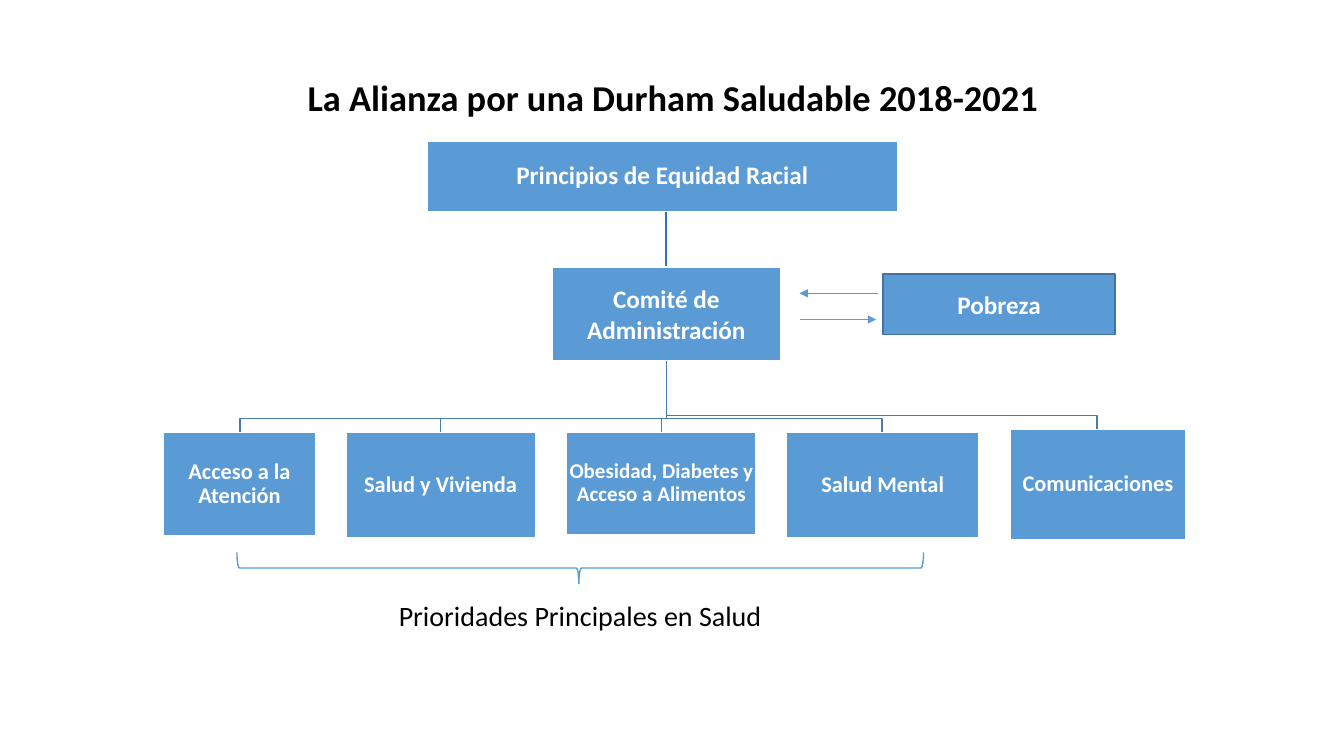
from lxml import etree
from pptx import Presentation
from pptx.dml.color import RGBColor
from pptx.enum.shapes import MSO_CONNECTOR, MSO_SHAPE
from pptx.enum.text import MSO_ANCHOR, MSO_AUTO_SIZE, PP_ALIGN
from pptx.oxml.ns import qn
from pptx.util import Inches, Pt

STRAIGHT = MSO_CONNECTOR.STRAIGHT
RECTANGLE, LEFT_BRACE = MSO_SHAPE.RECTANGLE, MSO_SHAPE.LEFT_BRACE
MIDDLE, CENTER = MSO_ANCHOR.MIDDLE, PP_ALIGN.CENTER
NO_AUTO_SIZE = MSO_AUTO_SIZE.NONE
TOP_SIDE = 0
TITLE_ONLY = 5

WIDTH, HEIGHT = Inches(13.33), Inches(7.5)
COLUMNS, ROWS = 133.3, 75

BLUE, WHITE, BLACK = "5B9BD5", "FFFFFF", "000000"
BRANCH_BLUE, TRUNK_BLUE, EDGE_BLUE = "497CAB", "2E75B6", "43739E"

TRUNK = 66.1
COMMITTEE_BOTTOM = 35.8
# label, left, top, width, height, size, branch end column, branch level
AREAS = [
    ("Acceso a la Atención", 16.2, 42.9, 15.1, 10.3, 16, 23.8, 41.5),
    ("Salud y Vivienda", 34.3, 42.9, 18.8, 10.4, 16, 43.7, 41.5),
    ("Obesidad, Diabetes y Acceso a Alimentos", 56.2, 42.9, 18.8, 10.1, 15, 65.6, 41.5),
    ("Salud Mental", 78, 42.9, 19.1, 10.4, 16, 87.5, 41.5),
    ("Comunicaciones", 100.2, 42.6, 17.4, 10.9, 16, 108.8, 41.2),
]


def color(hex_string):
    return RGBColor.from_string(hex_string)


def column(count):
    return round(WIDTH * count / COLUMNS)


def row(count):
    return round(HEIGHT * count / ROWS)


def area(left, top, width, height):
    return column(left), row(top), column(width), row(height)


class Chart:
    """Draws the organization chart's elements on one slide, in grid units."""

    def __init__(self, slide, font="Calibri"):
        self.slide = slide
        self.font = font

    def add_text(self, shape, lines, size, ink, bold=True, spacing=1.0, inset=None):
        frame = shape.text_frame
        frame.word_wrap = True
        frame.auto_size = NO_AUTO_SIZE
        frame.vertical_anchor = MIDDLE
        if inset is not None:
            frame.margin_left = frame.margin_right = Inches(inset)
            frame.margin_top = frame.margin_bottom = Inches(inset)
        for index, line in enumerate(lines):
            paragraph = frame.add_paragraph() if index else frame.paragraphs[0]
            paragraph.alignment = CENTER
            paragraph.line_spacing = spacing
            run = paragraph.add_run()
            run.text = line
            run.font.name = self.font
            run.font.size = Pt(size)
            run.font.bold = bold
            run.font.color.rgb = color(ink)

    def outline(self, shape, ink, width=1):
        shape.line.color.rgb = color(ink)
        shape.line.width = Pt(width)

    def title(self, text, place):
        title = self.slide.shapes.title
        title.left, title.top, title.width, title.height = area(*place)
        self.add_text(title, [text], 26, BLACK)

    def caption(self, text, place):
        box = self.slide.shapes.add_textbox(*area(*place))
        self.add_text(box, [text], 20, BLACK, bold=False)

    def box(self, lines, place, size=18, edge=WHITE, spacing=0.9):
        shape = self.slide.shapes.add_shape(RECTANGLE, *area(*place))
        shape.shadow.inherit = False
        shape.fill.solid()
        shape.fill.fore_color.rgb = color(BLUE)
        self.outline(shape, edge)
        self.add_text(shape, lines, size, WHITE, spacing=spacing, inset=0.01)
        return shape

    def branch(self, end_column, level, end_row):
        """Draws a bent line from below the committee down to an area."""
        builder = self.slide.shapes.build_freeform(column(TRUNK), row(COMMITTEE_BOTTOM))
        corners = [(TRUNK, level), (end_column, level), (end_column, end_row)]
        builder.add_line_segments([(column(x), row(y)) for x, y in corners], close=False)
        shape = builder.convert_to_shape()
        shape.shadow.inherit = False
        shape.fill.background()
        self.outline(shape, BRANCH_BLUE)

    def line(self, start, end, ink, width, arrow=False):
        connector = self.slide.shapes.add_connector(
            STRAIGHT, column(start[0]), row(start[1]), column(end[0]), row(end[1]))
        self.outline(connector, ink, width)
        properties = connector.element.spPr
        if arrow:
            etree.SubElement(properties.find(qn("a:ln")), qn("a:tailEnd"), type="triangle")
        etree.SubElement(properties, qn("a:effectLst"))
        return connector

    def brace(self, place):
        """Draws a brace turned so that its tip points down."""
        shape = self.slide.shapes.add_shape(LEFT_BRACE, *area(*place))
        shape.shadow.inherit = False
        shape.rotation = 270
        shape.adjustments[0] = 0.083
        shape.adjustments[1] = 0.498
        shape.fill.background()
        self.outline(shape, BLUE)


def main():
    presentation = Presentation()
    presentation.slide_width, presentation.slide_height = WIDTH, HEIGHT
    slide = presentation.slides.add_slide(presentation.slide_layouts[TITLE_ONLY])
    chart = Chart(slide)

    chart.title("La Alianza por una Durham Saludable 2018-2021", (1.6, 6.9, 130.4, 5.4))
    trunk = chart.line((TRUNK, 21), (TRUNK, 26.5), TRUNK_BLUE, 1.5)

    for label, left, top, width, height, size, end_column, level in reversed(AREAS):
        chart.branch(end_column, level, top)
    for label, left, top, width, height, size, end_column, level in AREAS:
        chart.box([label], (left, top, width, height), size)

    chart.box(["Principios de Equidad Racial"], (42.4, 14, 46.6, 7))
    committee = chart.box(["Comité de", "Administración"], (54.8, 26.5, 22.6, 9.3), spacing=1.0)
    trunk.end_connect(committee, TOP_SIDE)

    chart.box(["Pobreza"], (87.6, 27.2, 23, 6), edge=EDGE_BLUE, spacing=1.0)
    chart.line((87.1, 29.1), (79.3, 29.1), BLUE, 0.5, arrow=True)
    chart.line((79.3, 31.7), (86.9, 31.7), BLUE, 0.5, arrow=True)

    chart.brace((56, 22.3, 3.1, 68.1))
    chart.caption("Prioridades Principales en Salud", (37.3, 58.8, 40.5, 4.4))
    presentation.save("out.pptx")


if __name__ == "__main__":
    main()
